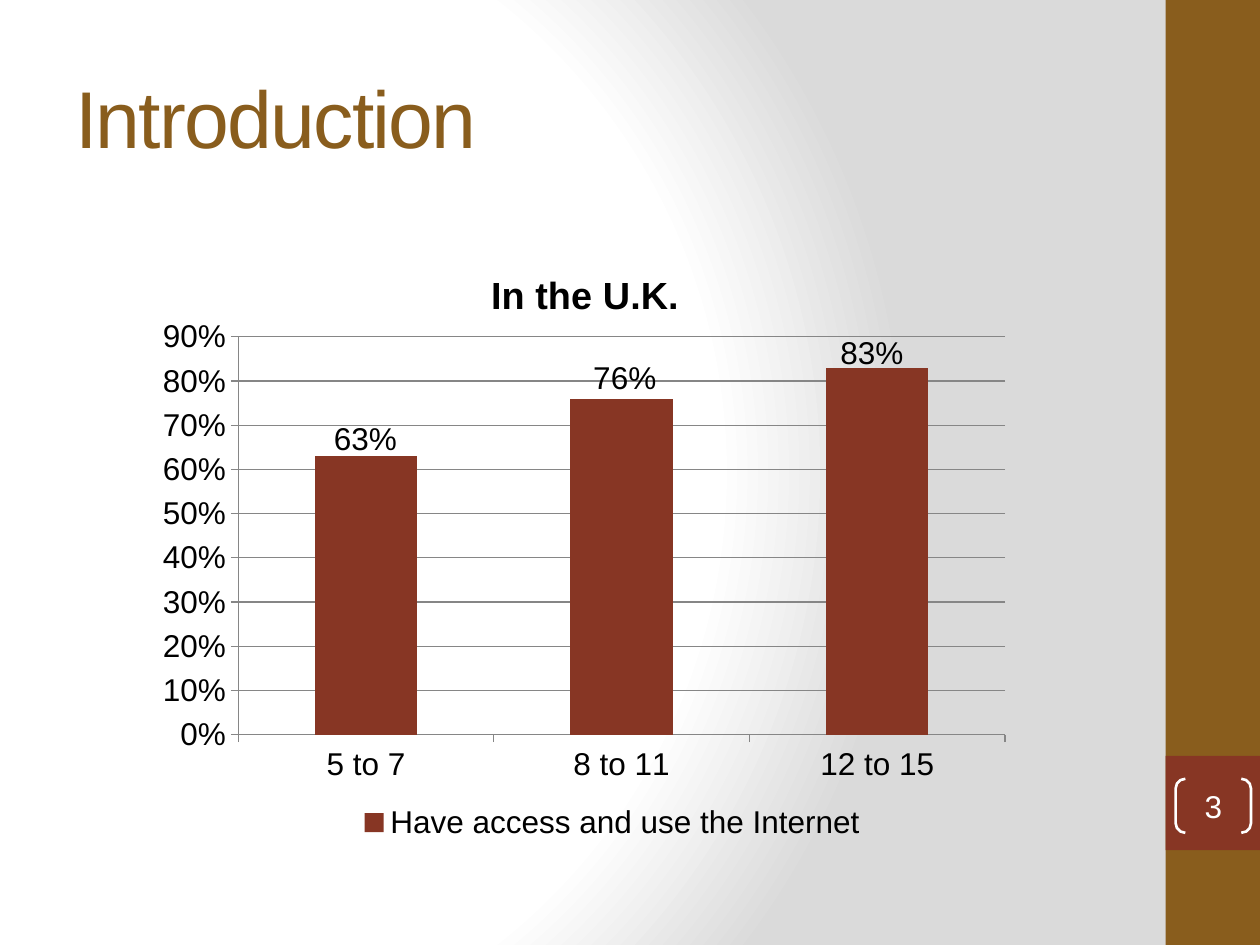
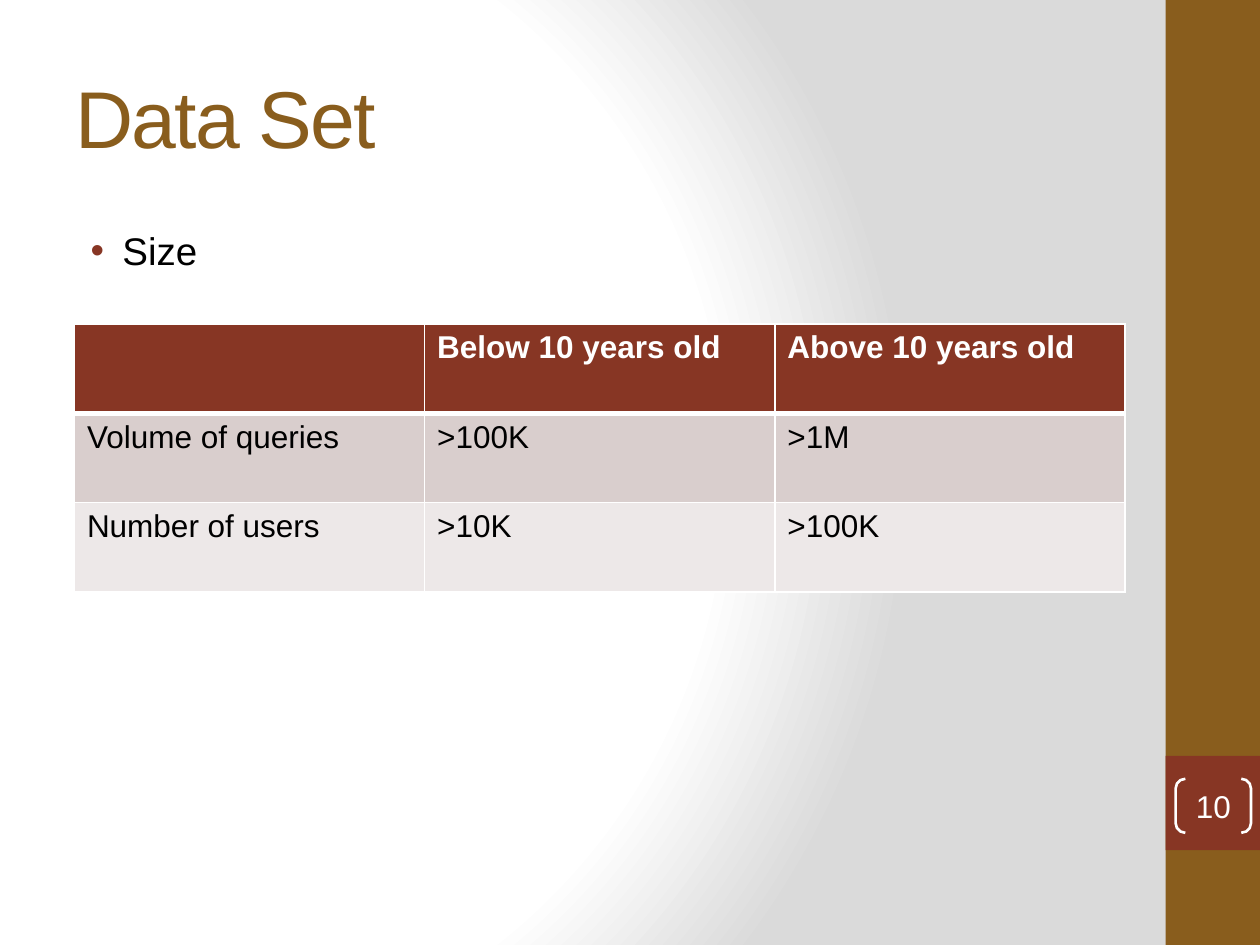
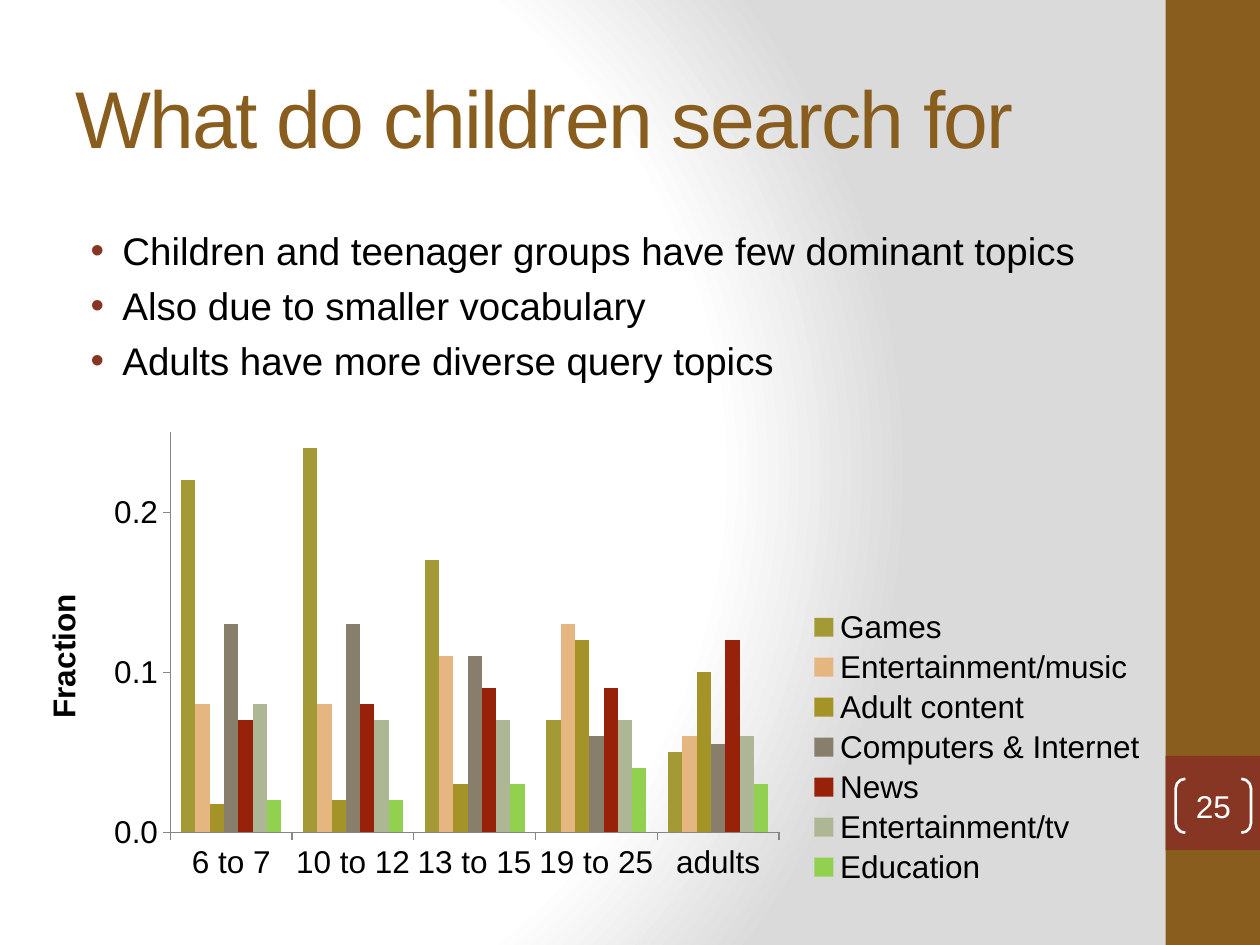
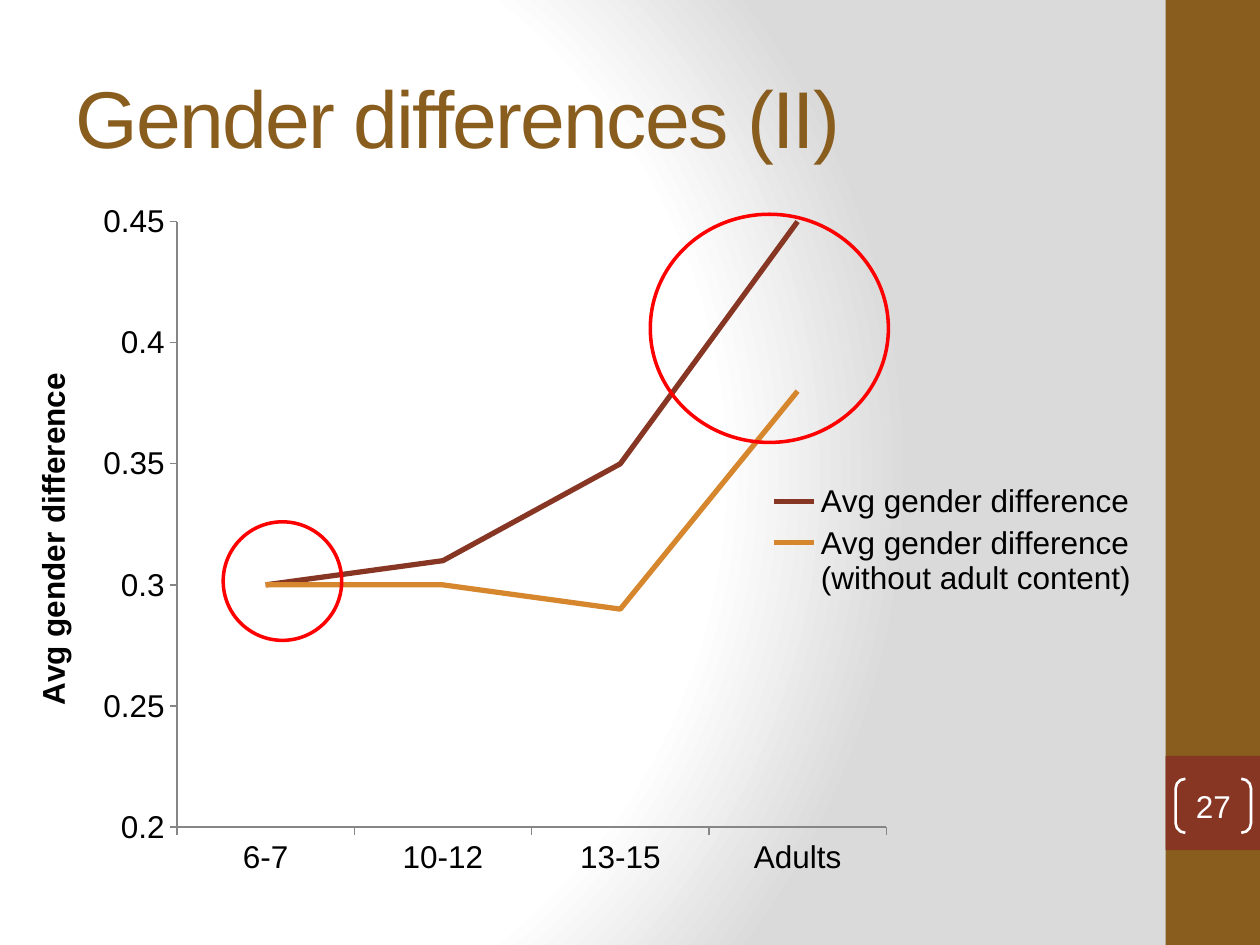
import pptx
import pptx.chart.data
import pptx.dml.color
import pptx.enum.chart
import pptx.enum.shapes
import pptx.enum.text
import pptx.oxml
import pptx.oxml.ns
import pptx.util

Cm = pptx.util.Cm
Pt = pptx.util.Pt
qn = pptx.oxml.ns.qn
Shape = pptx.enum.shapes.MSO_SHAPE
Anchor = pptx.enum.text.MSO_ANCHOR
ChartType = pptx.enum.chart.XL_CHART_TYPE
Tick = pptx.enum.chart.XL_TICK_MARK

FONT = "Arial"
BROWN, RUST, WHITE, BLACK = "895D1D", "873624", "FFFFFF", "000000"
AXIS_GREY, RED = "868686", "FF0000"


def color(hex_code):
    return pptx.dml.color.RGBColor.from_string(hex_code)


def place_in_chart(part, index, box, inner=False):
    """Fix a chart part at box (x, y, width, height, as fractions of the chart)."""
    for old_layout in part.findall(qn("c:layout")):
        part.remove(old_layout)
    target = '<c:layoutTarget val="inner"/>' if inner else ""
    modes = '<c:xMode val="edge"/><c:yMode val="edge"/>'
    sizes = "".join(f'<c:{tag} val="{value}"/>' for tag, value in zip("xywh", box))
    part.insert(index, pptx.oxml.parse_xml(
        f'<c:layout {pptx.oxml.ns.nsdecls("c")}><c:manualLayout>'
        f'{target}{modes}{sizes}</c:manualLayout></c:layout>'))


prs = pptx.Presentation()
prs.slide_width, prs.slide_height = Cm(25.4), Cm(19.05)

# Shared background: white glow on the left, grey on the right
prs.slide_master.background.fill.gradient()
gradient = prs.slide_master.element.find(".//" + qn("a:gradFill"))
stops = "".join(
    f'<a:gs pos="{percent * 1000}"><a:srgbClr val="{shade}"/></a:gs>'
    for percent, shade in [(0, WHITE), (75, WHITE), (100, "DADADA")])
gradient.getparent().replace(gradient, pptx.oxml.parse_xml(
    f'<a:gradFill {pptx.oxml.ns.nsdecls("a")} rotWithShape="1"><a:gsLst>{stops}</a:gsLst>'
    '<a:path path="circle"><a:fillToRect l="20000" t="50000" r="100000" b="50000"/>'
    '</a:path></a:gradFill>'))

# Side band, page number and title of every slide
slides = []
for page, heading in [(3, "Introduction"), (10, "Data Set"),
                      (25, "What do children search for"),
                      (27, "Gender differences (II)")]:
    slide = prs.slides.add_slide(prs.slide_layouts[6])
    slides.append(slide)
    for top, height, fill in [(0, 19.05, BROWN), (15.24, 1.9, RUST)]:
        band = slide.shapes.add_shape(Shape.RECTANGLE, Cm(23.5), Cm(top), Cm(1.9), Cm(height))
        band.shadow.inherit = False
        band.fill.solid()
        band.fill.fore_color.rgb = color(fill)
        band.line.fill.background()

    title = slide.shapes.add_textbox(Cm(1.27), Cm(0.76), Cm(21.16), Cm(3.18)).text_frame
    title.word_wrap = True
    title.vertical_anchor = Anchor.MIDDLE
    title.text = heading
    title_font = title.paragraphs[0].font
    title_font.name, title_font.size = FONT, Pt(46)
    title_font.color.rgb = color(BROWN)
    title.paragraphs[0].runs[0].font._element.set("spc", "-100")

    bracket = slide.shapes.add_shape(Shape.DOUBLE_BRACKET, Cm(23.7), Cm(15.7), Cm(1.52), Cm(1.09))
    bracket.adjustments[0] = 0.18
    bracket.shadow.inherit = False
    bracket.fill.background()
    bracket.line.color.rgb = color(WHITE)
    bracket.line.width = Pt(1.5)
    number = bracket.text_frame
    number.margin_left = number.margin_right = number.margin_top = number.margin_bottom = 0
    number.vertical_anchor = Anchor.MIDDLE
    number.text = str(page)
    number.paragraphs[0].alignment = pptx.enum.text.PP_ALIGN.CENTER
    number_font = number.paragraphs[0].font
    number_font.name, number_font.size = FONT, Pt(18)
    number_font.color.rgb = color(WHITE)

introduction, data_set, topics, gender = slides

# Bullet lists
for slide, points in [
        (data_set, ["Size"]),
        (topics, ["Children and teenager groups have few dominant topics",
                  "Also due to smaller vocabulary",
                  "Adults have more diverse query topics"])]:
    body = slide.shapes.add_textbox(Cm(1.27), Cm(4.45), Cm(21.16), Cm(13.34)).text_frame
    body.word_wrap = True
    body.text = "\n".join(points)
    for point in body.paragraphs:
        point.space_before = Pt(5)
        point.font.name, point.font.size = FONT, Pt(22)
        point.font.color.rgb = color(BLACK)
        indent = point._p.get_or_add_pPr()
        indent.set("marL", str(Cm(0.95)))
        indent.set("indent", str(-Cm(0.64)))
        bullet = (f'<a:buClr {pptx.oxml.ns.nsdecls("a")}><a:srgbClr val="{RUST}"/></a:buClr>',
                  f'<a:buFont {pptx.oxml.ns.nsdecls("a")} typeface="{FONT}"/>',
                  f'<a:buChar {pptx.oxml.ns.nsdecls("a")} char="•"/>')
        for offset, xml in enumerate(bullet, start=1):
            indent.insert(offset, pptx.oxml.parse_xml(xml))

# Data set sizes
size_rows = [["", "Below 10 years old", "Above 10 years old"],
             ["Volume of queries", ">100K", ">1M"],
             ["Number of users", ">10K", ">100K"]]
row_fills = [RUST, "D9CECD", "EDE8E8"]
sizes_table = data_set.shapes.add_table(3, 3, Cm(1.5), Cm(6.53), Cm(21.18), Cm(5.4)).table
for r, (row, fill) in enumerate(zip(size_rows, row_fills)):
    for c, entry in enumerate(row):
        cell = sizes_table.cell(r, c)
        cell.text = entry
        entry_font = cell.text_frame.paragraphs[0].font
        entry_font.name, entry_font.size, entry_font.bold = FONT, Pt(18), r == 0
        entry_font.color.rgb = color(WHITE if r == 0 else BLACK)
        edges = {"lnL": 1, "lnR": 1, "lnT": 3 if r == 1 else 1, "lnB": 3 if r == 0 else 1}
        for edge, width in edges.items():
            cell._tc.get_or_add_tcPr().append(pptx.oxml.parse_xml(
                f'<a:{edge} {pptx.oxml.ns.nsdecls("a")} w="{Pt(width)}"><a:solidFill>'
                f'<a:srgbClr val="{WHITE}"/></a:solidFill></a:{edge}>'))
        cell.fill.solid()
        cell.fill.fore_color.rgb = color(fill)

# Charts
chart_plans = [
    dict(slide=introduction, kind=ChartType.COLUMN_STACKED, box=(2.69, 4.93, 18.21, 12.4),
         plot=(0.116, 0.15, 0.849, 0.647), legend=(0.24, 0.9, 0.58, 0.08),
         heading="In the U.K.", axis_title=None, scale=(0, 0.9, 0.1), format="0%",
         categories=["5 to 7", "8 to 11", "12 to 15"],
         series=[("Have access and use the Internet", RUST, (0.63, 0.76, 0.83))]),
    dict(slide=topics, kind=ChartType.COLUMN_CLUSTERED, box=(0.3, 8.53, 23.06, 9.4),
         plot=(0.136, 0.02, 0.532, 0.858), legend=(0.7, 0.39, 0.29, 0.61),
         heading=None, axis_title="Fraction", scale=(0, 0.25, 0.1), format="#,##0.0",
         categories=["6 to 7", "10 to 12", "13 to 15", "19 to 25", "adults"],
         series=[("Games", "A39A36", (0.22, 0.24, 0.17, 0.07, 0.05)),
                 ("Entertainment/music", "E6B681", (0.08, 0.08, 0.11, 0.13, 0.06)),
                 ("Adult content", "A49428", (0.018, 0.02, 0.03, 0.12, 0.1)),
                 ("Computers & Internet", "877F6C", (0.13, 0.13, 0.11, 0.06, 0.055)),
                 ("News", "972109", (0.07, 0.08, 0.09, 0.09, 0.12)),
                 ("Entertainment/tv", "AEB795", (0.08, 0.07, 0.07, 0.07, 0.06)),
                 ("Education", "92D050", (0.02, 0.02, 0.03, 0.04, 0.03))]),
    dict(slide=gender, kind=ChartType.LINE, box=(0.51, 3.94, 22.66, 13.89),
         plot=(0.135, 0.038, 0.631, 0.879), legend=(0.66, 0.41, 0.33, 0.18),
         heading=None, axis_title="Avg gender difference", scale=(0.2, 0.45, 0.05),
         format="General", categories=["6-7", "10-12", "13-15", "Adults"],
         series=[("Avg gender difference", RUST, (0.3, 0.31, 0.35, 0.45)),
                 ("Avg gender difference (without adult content)", "D6862D",
                  (0.3, 0.3, 0.29, 0.38))]),
]
for plan in chart_plans:
    figures = pptx.chart.data.CategoryChartData(number_format=plan["format"])
    figures.categories = plan["categories"]
    for name, _, values in plan["series"]:
        figures.add_series(name, values)
    chart = plan["slide"].shapes.add_chart(
        plan["kind"], *[Cm(length) for length in plan["box"]], figures).chart
    chart.font.name, chart.font.size = FONT, Pt(18)
    chart.font.color.rgb = color(BLACK)

    values_axis = chart.value_axis
    values_axis.minimum_scale, values_axis.maximum_scale, values_axis.major_unit = plan["scale"]
    values_axis.tick_labels.number_format = plan["format"]
    values_axis.tick_labels.number_format_is_linked = False
    values_axis.has_major_gridlines = plan["heading"] is not None
    if values_axis.has_major_gridlines:
        values_axis.major_gridlines.format.line.color.rgb = color(AXIS_GREY)
    for axis in (chart.category_axis, values_axis):
        axis.major_tick_mark, axis.minor_tick_mark = Tick.OUTSIDE, Tick.NONE
        axis.format.line.color.rgb = color(AXIS_GREY)

    chart.has_title = plan["heading"] is not None
    captions = []
    if plan["heading"]:
        captions.append((chart.chart_title, plan["heading"], 21.6))
    if plan["axis_title"]:
        captions.append((values_axis.axis_title, plan["axis_title"], 18))
    for caption, wording, size in captions:
        caption.text_frame.text = wording
        caption_font = caption.text_frame.paragraphs[0].font
        caption_font.name, caption_font.size, caption_font.bold = FONT, Pt(size), True
        caption_font.color.rgb = color(BLACK)

    chart.has_legend = True
    chart.legend.position = pptx.enum.chart.XL_LEGEND_POSITION.RIGHT
    chart.legend.include_in_layout = False
    place_in_chart(chart.legend._element, 1, plan["legend"])
    place_in_chart(chart._chartSpace.chart.plotArea, 0, plan["plot"], inner=True)

    plot = chart.plots[0]
    plot.vary_by_categories = False
    is_line = plan["kind"] == ChartType.LINE
    if not is_line:
        plot.gap_width = 150
        plot.overlap = 100 if plan["kind"] == ChartType.COLUMN_STACKED else 0
    for series, (_, shade, _) in zip(plot.series, plan["series"]):
        if is_line:
            series.smooth = False
            series.marker.style = pptx.enum.chart.XL_MARKER_STYLE.NONE
            series.format.line.width = Pt(3)
            series.format.line.color.rgb = color(shade)
        else:
            series.format.fill.solid()
            series.format.fill.fore_color.rgb = color(shade)

# Percentages above the columns
for left, top, share in [(6.48, 8.33, "63%"), (11.71, 7.09, "76%"), (16.69, 6.58, "83%")]:
    label = introduction.shapes.add_textbox(Cm(left), Cm(top), Cm(1.8), Cm(1.02)).text_frame
    label.word_wrap = False
    label.auto_size = pptx.enum.text.MSO_AUTO_SIZE.SHAPE_TO_FIT_TEXT
    label.text = share
    label_font = label.paragraphs[0].font
    label_font.name, label_font.size = FONT, Pt(18)
    label_font.color.rgb = color(BLACK)

# Rings around the youngest group and the adults
for ring_box in [(4.5, 10.52, 2.39, 2.39), (13.11, 4.32, 4.8, 4.6)]:
    ring = gender.shapes.add_shape(Shape.OVAL, *[Cm(length) for length in ring_box])
    ring.shadow.inherit = False
    ring.fill.background()
    ring.line.color.rgb = color(RED)
    ring.line.width = Pt(2)

prs.save("out.pptx")
